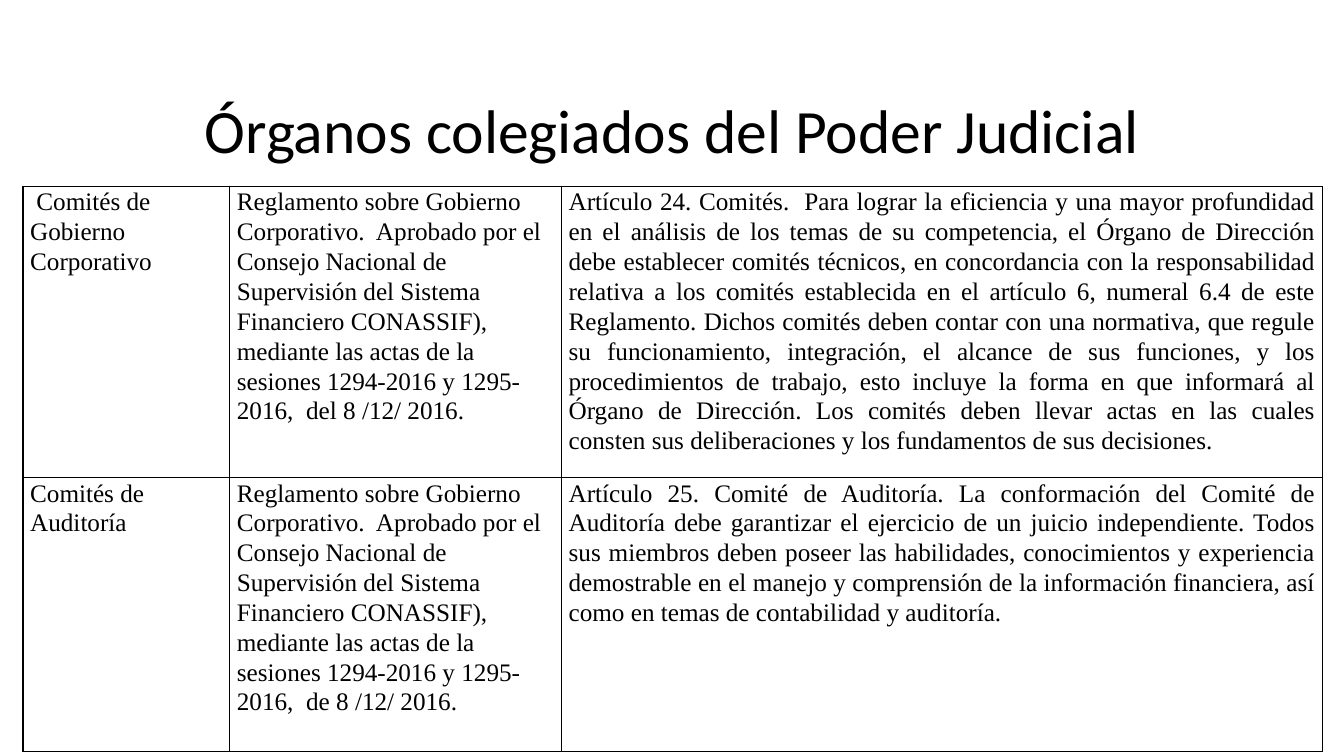
"""Build the slide on the collegiate bodies of the Judiciary."""
from dataclasses import dataclass

from lxml import etree
from pptx import Presentation
from pptx import util as u
from pptx.dml.color import RGBColor
from pptx.enum import text
from pptx.oxml import ns


@dataclass(frozen=True)
class Theme:
    ink: str = "000000"
    paper: str = "FFFFFF"
    title_font: str = "Calibri"
    body_font: str = "Times New Roman"
    title_size: int = 44
    body_size: int = 18
    border_width: int = 1


theme = Theme()


def write(paragraph, words, font, size, spacing, alignment):
    paragraph.alignment = alignment
    paragraph.line_spacing = spacing
    run = paragraph.add_run()
    run.text = words
    run.font.name = font
    run.font.size = u.Pt(size)
    run.font.bold = False
    run.font.color.rgb = RGBColor.from_string(theme.ink)


def add_borders(cell):
    properties = cell._tc.get_or_add_tcPr()
    for position, side in enumerate(("lnL", "lnR", "lnT", "lnB")):
        line = etree.Element(ns.qn(f"a:{side}"), w=str(u.Pt(theme.border_width)))
        fill = etree.SubElement(line, ns.qn("a:solidFill"))
        etree.SubElement(fill, ns.qn("a:srgbClr"), val=theme.ink)
        properties.insert(position, line)


presentation = Presentation()
presentation.slide_width = u.Cm(33.87)
presentation.slide_height = u.Cm(19.05)
slide = presentation.slides.add_slide(presentation.slide_layouts[6])
slide.background.fill.solid()
slide.background.fill.fore_color.rgb = RGBColor.from_string(theme.paper)

title = slide.shapes.add_textbox(u.Cm(2.34), u.Cm(2.06), u.Cm(29.21), u.Cm(2.62))
title.text_frame.word_wrap = True
title.text_frame.vertical_anchor = text.MSO_ANCHOR.MIDDLE
write(title.text_frame.paragraphs[0], "Órganos colegiados del Poder Judicial",
      theme.title_font, theme.title_size, 0.9, text.PP_ALIGN.CENTER)

regulation = (
    "Reglamento sobre Gobierno Corporativo.  Aprobado por el Consejo Nacional de "
    "Supervisión del Sistema Financiero CONASSIF), mediante las actas de la "
    "sesiones 1294-2016 y 1295-2016,  {} 8 /12/ 2016."
)
committees = [
    (
        " Comités de Gobierno Corporativo",
        regulation.format("del"),
        "Artículo 24. Comités.  Para lograr la eficiencia y una mayor profundidad en el "
        "análisis de los temas de su competencia, el Órgano de Dirección debe establecer "
        "comités técnicos, en concordancia con la responsabilidad relativa a los comités "
        "establecida en el artículo 6, numeral 6.4 de este Reglamento. Dichos comités deben "
        "contar con una normativa, que regule su funcionamiento, integración, el alcance de "
        "sus funciones, y los procedimientos de trabajo, esto incluye la forma en que "
        "informará al Órgano de Dirección. Los comités deben llevar actas en las cuales "
        "consten sus deliberaciones y los fundamentos de sus decisiones.",
    ),
    (
        "Comités de Auditoría",
        regulation.format("de"),
        "Artículo 25. Comité de Auditoría. La conformación del Comité de Auditoría debe "
        "garantizar el ejercicio de un juicio independiente. Todos sus miembros deben poseer "
        "las habilidades, conocimientos y experiencia demostrable en el manejo y comprensión "
        "de la información financiera, así como en temas de contabilidad y auditoría.",
    ),
]
column_widths = (5.21, 8.36, 19.18)
row_heights = (6.96, 6.9)
alignments = (text.PP_ALIGN.LEFT, text.PP_ALIGN.LEFT, text.PP_ALIGN.JUSTIFY)

table = slide.shapes.add_table(
    len(row_heights), len(column_widths), u.Cm(0.58), u.Cm(4.7),
    u.Cm(sum(column_widths)), u.Cm(sum(row_heights))).table
table.first_row = False
table.horz_banding = False
for column, width in zip(table.columns, column_widths):
    column.width = u.Cm(width)
for row, height, committee in zip(table.rows, row_heights, committees):
    row.height = u.Cm(height)
    for cell, words, alignment in zip(row.cells, committee, alignments):
        cell.margin_left = cell.margin_right = u.Cm(0.18)
        cell.margin_top = cell.margin_bottom = 0
        cell.fill.background()
        add_borders(cell)
        write(cell.text_frame.paragraphs[0], words,
              theme.body_font, theme.body_size, 1.07, alignment)

presentation.save("out.pptx")
